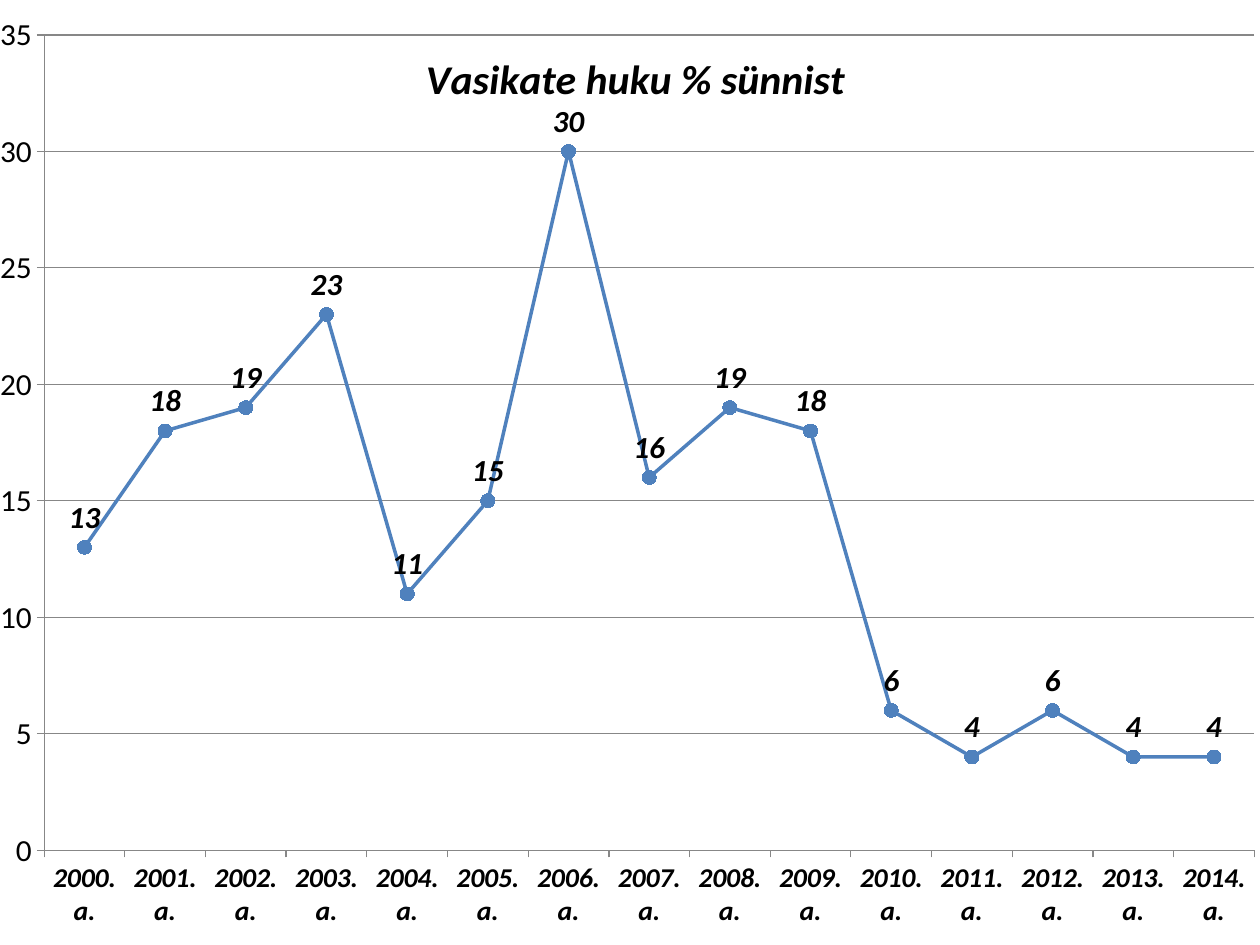
from lxml import etree
from pptx import Presentation
from pptx.chart.data import CategoryChartData
from pptx.dml.color import RGBColor
from pptx.enum.chart import XL_CHART_TYPE, XL_LABEL_POSITION, XL_MARKER_STYLE, XL_TICK_MARK
from pptx.oxml import parse_xml
from pptx.oxml.ns import nsdecls, qn
from pptx.util import Inches, Pt

LINE = XL_CHART_TYPE.LINE_MARKERS
ABOVE = XL_LABEL_POSITION.ABOVE
CIRCLE = XL_MARKER_STYLE.CIRCLE
OUTSIDE = XL_TICK_MARK.OUTSIDE

FONT = "Calibri"
BLACK, GREY, BLUE, GREEN = "000000", "878787", "4F81BD", "92D050"
LOSSES = [13, 18, 19, 23, 11, 15, 30, 16, 19, 18, 6, 4, 6, 4, 4]
YEARS = [f"{2000 + i}.a." for i in range(len(LOSSES))]


def paint(color, value):
    color.rgb = RGBColor.from_string(value)


def set_font(font, size, strong=False):
    """Strong text is both bold and italic."""
    font.name = FONT
    font.size = Pt(size)
    font.bold = font.italic = strong
    font.fill.solid()
    paint(font.fill.fore_color, BLACK)


def set_line(line, color, width):
    line.fill.solid()
    paint(line.color, color)
    line.width = Pt(width)


def make_layout(target=None, **places):
    """Build a manual layout from fractions of the chart."""
    layout = parse_xml(f"<c:layout {nsdecls('c')}/>")
    manual = etree.SubElement(layout, qn("c:manualLayout"))
    if target:
        etree.SubElement(manual, qn("c:layoutTarget")).set("val", target)
    for mode in ("xMode", "yMode"):
        etree.SubElement(manual, qn(f"c:{mode}")).set("val", "edge")
    for key, value in places.items():
        etree.SubElement(manual, qn(f"c:{key}")).set("val", str(value))
    return layout


def replace_layout(parent, layout, index):
    for old in parent.findall(qn("c:layout")):
        parent.remove(old)
    parent.insert(index, layout)


def add_title(chart, text):
    chart.has_title = True
    title = chart.chart_title
    title.text_frame.text = text
    set_font(title.text_frame.paragraphs[0].runs[0].font, 24, True)
    title.include_in_layout = True
    root = chart.element.chart.find(qn("c:title"))
    replace_layout(root, make_layout(x=0.33, y=0.02), 1)
    root.find(qn("c:overlay")).set("val", "1")


def style_axis(axis, size, strong=False):
    axis.major_tick_mark = OUTSIDE
    set_font(axis.tick_labels.font, size, strong)
    set_line(axis.format.line, GREY, 0.75)


def style_series(series):
    series.smooth = False
    set_line(series.format.line, BLUE, 2)
    marker = series.marker
    marker.style = CIRCLE
    marker.size = 8
    marker.format.fill.solid()
    paint(marker.format.fill.fore_color, GREEN)
    labels = series.data_labels
    labels.show_value = True
    labels.position = ABOVE
    labels.number_format = "0"
    labels.number_format_is_linked = False
    set_font(labels.font, 18, True)


def add_line_chart(slide):
    data = CategoryChartData(number_format="0")
    data.categories = YEARS
    data.add_series("Series 1", LOSSES)
    chart = slide.shapes.add_chart(
        LINE, Inches(0), Inches(0.13), Inches(9.96), Inches(7.24), data
    ).chart
    set_font(chart.font, 10)
    chart.has_legend = False
    add_title(chart, "Vasikate huku % sünnist")
    style_axis(chart.category_axis, 16, True)

    scale = chart.value_axis
    style_axis(scale, 18)
    scale.minimum_scale, scale.maximum_scale, scale.major_unit = 0, 35, 5
    scale.tick_labels.number_format = "0"
    scale.tick_labels.number_format_is_linked = False
    scale.has_major_gridlines = True
    set_line(scale.major_gridlines.format.line, GREY, 0.75)

    plot = chart.plots[0]
    plot.vary_by_categories = False
    style_series(plot.series[0])
    area = chart.element.chart.plotArea
    replace_layout(area, make_layout("inner", x=0.03, y=0.01, w=0.97, h=0.92), 0)


def main():
    deck = Presentation()
    deck.slide_width, deck.slide_height = Inches(10), Inches(7.5)
    slide = deck.slides.add_slide(deck.slide_layouts[6])
    add_line_chart(slide)
    deck.save("out.pptx")


if __name__ == "__main__":
    main()
